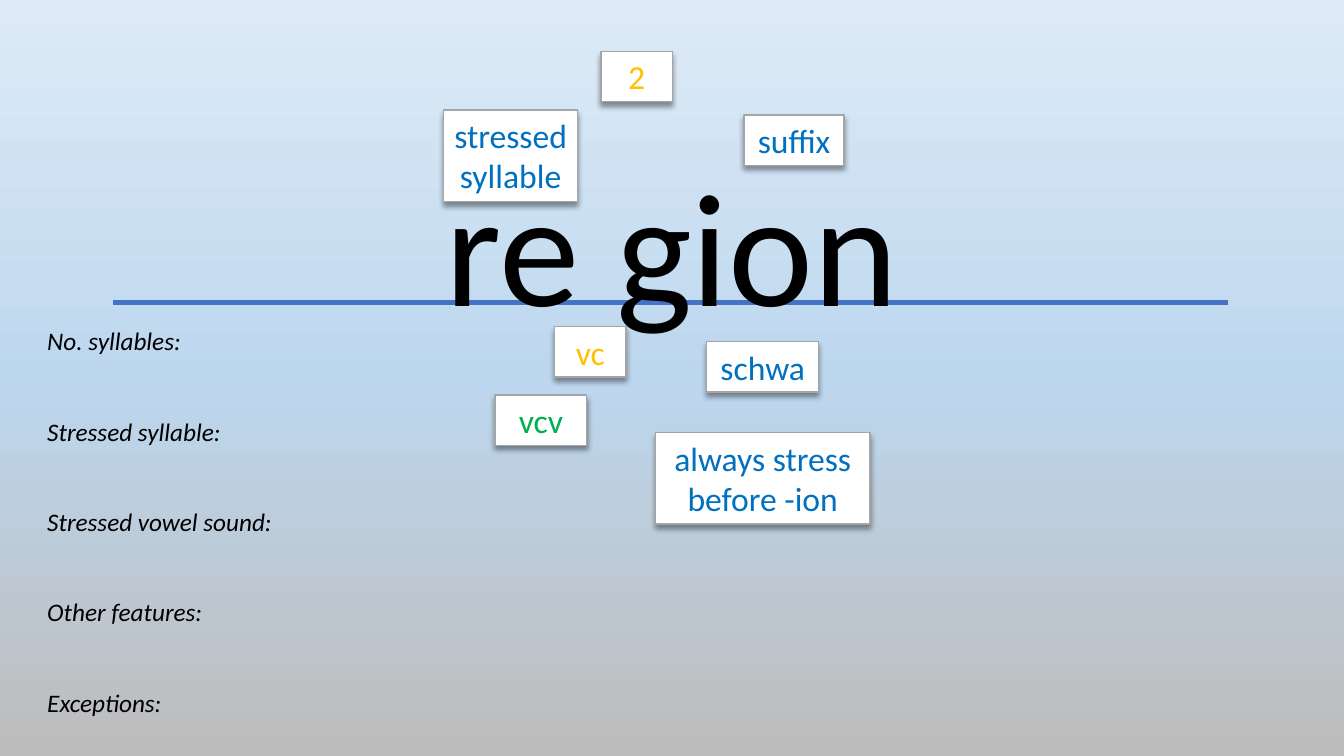
from copy import deepcopy

from lxml import etree
from pptx import Presentation
from pptx.dml.color import RGBColor
from pptx.enum.shapes import MSO_CONNECTOR, MSO_SHAPE
from pptx.enum.text import MSO_ANCHOR, MSO_AUTO_SIZE, PP_ALIGN
from pptx.oxml import parse_xml
from pptx.oxml.ns import nsdecls, qn
from pptx.util import Inches, Pt

RECTANGLE = MSO_SHAPE.RECTANGLE
STRAIGHT = MSO_CONNECTOR.STRAIGHT
TOP = MSO_ANCHOR.TOP
GROW = MSO_AUTO_SIZE.SHAPE_TO_FIT_TEXT
CENTER = PP_ALIGN.CENTER
LEFT = PP_ALIGN.LEFT

COLORS = {
    "sky": "DEEBF7", "horizon": "BDD7EE", "ground": "BDBCBC",
    "card": "FFFFFF", "border": "A5A5A5", "rule": "4472C4", "ink": "000000",
    "feature": "0070C0", "count": "FFC000", "pattern": "00B050",
}


class WordSlide:
    """Draws the parts of a word study slide in one shared style."""

    font = "Calibri"

    def __init__(self, slide):
        self.slide = slide

    def color(self, name):
        return RGBColor.from_string(COLORS[name])

    def background(self, names):
        fill = self.slide.background.fill
        fill.gradient()
        fill.gradient_angle = 270
        stop_list = self.slide._element.find(".//" + qn("a:gsLst"))
        stop_list.insert(1, deepcopy(stop_list[0]))
        for index, (stop, name) in enumerate(zip(fill.gradient_stops, names)):
            stop.position = index / (len(names) - 1)
            stop.color.rgb = self.color(name)

    def set_text(self, shape, lines, size, color, align=CENTER, italic=False, gap=0):
        frame = shape.text_frame
        frame.text = "\n".join(lines)
        frame.word_wrap = True
        frame.auto_size = GROW
        frame.vertical_anchor = TOP
        for index, paragraph in enumerate(frame.paragraphs):
            paragraph.alignment = align
            paragraph.space_before = Pt(gap if index else 0)
            for run in paragraph.runs:
                run.font.name = self.font
                run.font.size = Pt(size)
                run.font.italic = italic
                run.font.color.rgb = self.color(color)

    def text(self, left, top, width, height, lines, size, **style):
        box = self.slide.shapes.add_textbox(
            Inches(left), Inches(top), Inches(width), Inches(height))
        self.set_text(box, lines, size, "ink", **style)

    def card(self, left, top, width, height, lines, color):
        card = self.slide.shapes.add_shape(
            RECTANGLE, Inches(left), Inches(top), Inches(width), Inches(height))
        card.fill.solid()
        card.fill.fore_color.rgb = self.color("card")
        card.line.color.rgb = self.color("border")
        card.line.width = Pt(1)
        card._element.spPr.append(parse_xml(
            f'<a:effectLst {nsdecls("a")}>'
            f'<a:outerShdw blurRad="{Pt(4)}" dist="{Pt(3)}" dir="5400000" rotWithShape="0">'
            f'<a:srgbClr val="{COLORS["ink"]}"><a:alpha val="40000"/></a:srgbClr>'
            '</a:outerShdw></a:effectLst>'))
        self.set_text(card, lines, 24, color)

    def rule(self, left, right, y):
        rule = self.slide.shapes.add_connector(
            STRAIGHT, Inches(left), Inches(y), Inches(right), Inches(y))
        rule.line.color.rgb = self.color("rule")
        rule.line.width = Pt(3)
        etree.SubElement(rule._element.spPr, qn("a:effectLst"))


def main():
    deck = Presentation()
    deck.slide_width, deck.slide_height = Inches(13.33), Inches(7.5)
    page = WordSlide(deck.slides.add_slide(deck.slide_layouts[6]))

    page.background(["sky", "horizon", "ground"])
    page.card(4.4, 1.09, 1.33, 0.91, ["stressed", "syllable"], "feature")
    page.rule(1.12, 12.18, 3)
    page.text(1.39, 1.39, 10.55, 2.04, ["re gion"], 115)

    clues = [
        (5.96, 0.51, 0.71, 0.5, "2", "count"),
        (5.5, 3.24, 0.71, 0.5, "vc", "count"),
        (7.38, 1.14, 0.99, 0.5, "suffix", "feature"),
        (7.01, 3.39, 1.11, 0.5, "schwa", "feature"),
        (4.91, 3.92, 0.91, 0.5, "vcv", "pattern"),
        (6.5, 4.29, 2.13, 0.91, "always stress before -ion", "feature"),
    ]
    for left, top, width, height, clue, color in clues:
        page.card(left, top, width, height, [clue], color)

    questions = ["No. syllables:", "Stressed syllable:", "Stressed vowel sound:",
                 "Other features:", "Exceptions:"]
    page.text(0.37, 3.18, 2.45, 4.04, questions, 18, align=LEFT, italic=True, gap=43)

    deck.save("out.pptx")


if __name__ == "__main__":
    main()
